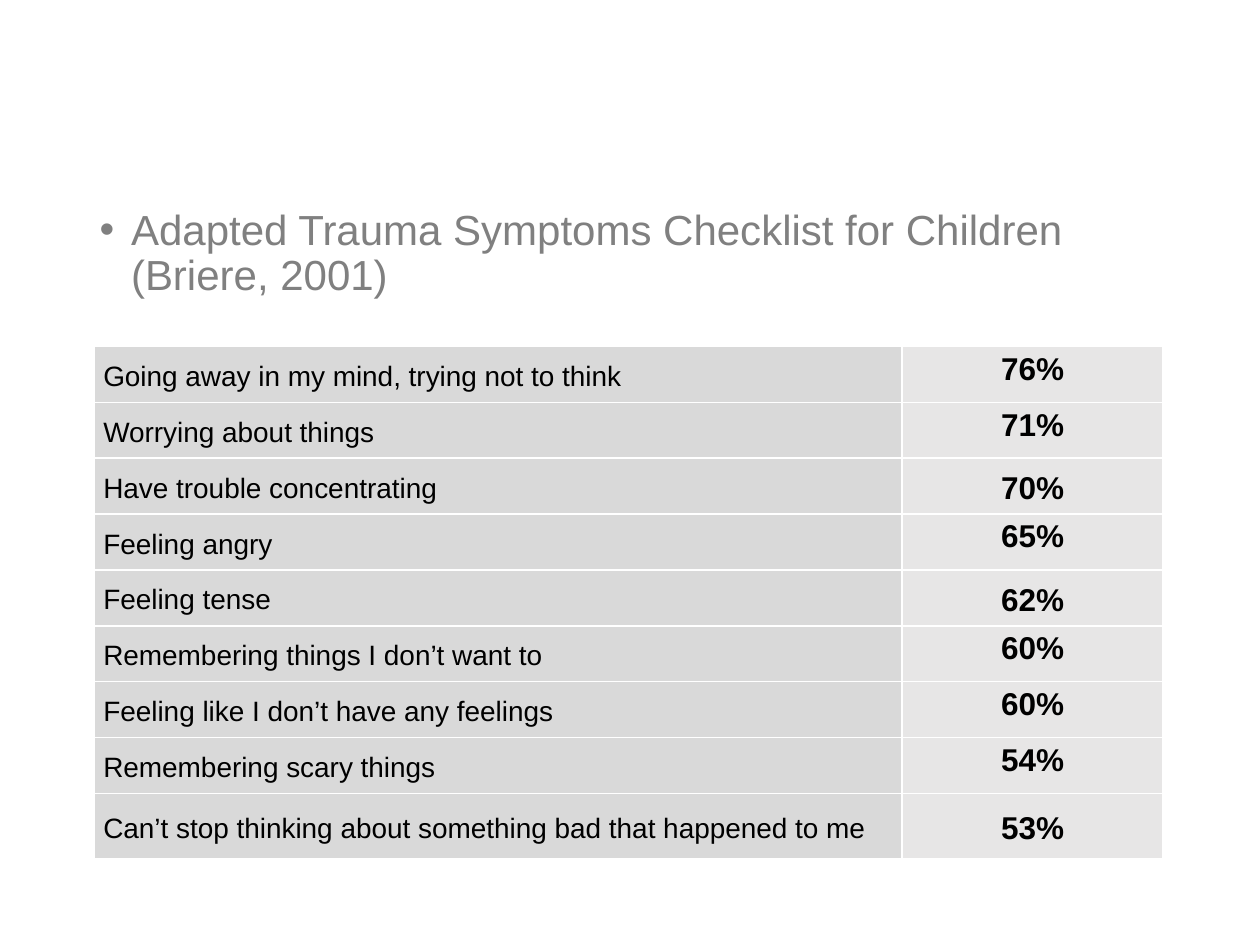
from dataclasses import dataclass

from lxml.etree import SubElement
from pptx import Presentation
from pptx.dml.color import RGBColor
from pptx.enum.text import MSO_ANCHOR, MSO_AUTO_SIZE, PP_ALIGN
from pptx.oxml.ns import qn
from pptx.util import Inches, Pt


@dataclass(frozen=True)
class Theme:
    """Colours, type sizes and font of the slide."""
    font: str = "Arial"
    heading_color: str = "808080"
    text_color: str = "000000"
    symptom_fill: str = "D9D9D9"
    share_fill: str = "E7E6E6"
    rule_color: str = "FFFFFF"
    heading_size: int = 24
    symptom_size: int = 16
    share_size: int = 18


THEME = Theme()
HEADING = "Adapted Trauma Symptoms Checklist for Children (Briere, 2001)"
SYMPTOMS = [
    ("Going away in my mind, trying not to think", "76%", MSO_ANCHOR.TOP),
    ("Worrying about things", "71%", MSO_ANCHOR.TOP),
    ("Have trouble concentrating", "70%", MSO_ANCHOR.MIDDLE),
    ("Feeling angry", "65%", MSO_ANCHOR.TOP),
    ("Feeling tense", "62%", MSO_ANCHOR.MIDDLE),
    ("Remembering things I don’t want to", "60%", MSO_ANCHOR.TOP),
    ("Feeling like I don’t have any feelings", "60%", MSO_ANCHOR.TOP),
    ("Remembering scary things", "54%", MSO_ANCHOR.TOP),
    ("Can’t stop thinking about something bad that happened to me", "53%",
     MSO_ANCHOR.MIDDLE),
]


def style_runs(paragraph, size, color, bold=False):
    """Apply the theme font with a size, colour and weight to each run."""
    for run in paragraph.runs:
        run.font.name = THEME.font
        run.font.size = Pt(size)
        run.font.bold = bold
        run.font.color.rgb = RGBColor.from_string(color)


def rule_cell(cell, sides):
    """Draw one-point rules on the given sides of a cell."""
    properties = cell._tc.get_or_add_tcPr()
    for side in sides:
        line = SubElement(properties, qn(f"a:ln{side}"), w=str(Pt(1)))
        fill = SubElement(line, qn("a:solidFill"))
        SubElement(fill, qn("a:srgbClr"), val=THEME.rule_color)


def fill_cell(cell, text, size, fill, sides, anchor, align, bold=False):
    """Write, align, rule and colour one table cell."""
    cell.text_frame.text = text
    cell.margin_left = cell.margin_right = Inches(0.07)
    cell.margin_top = cell.margin_bottom = 0
    cell.vertical_anchor = anchor
    paragraph = cell.text_frame.paragraphs[0]
    paragraph.alignment = align
    paragraph.line_spacing = 1.15
    paragraph.space_after = Pt(10)
    style_runs(paragraph, size, THEME.text_color, bold)
    rule_cell(cell, sides)
    cell.fill.solid()
    cell.fill.fore_color.rgb = RGBColor.from_string(fill)


def place_heading(body, left, top, width, height):
    """Fill the body placeholder with the bulleted checklist name."""
    body.left, body.top, body.width, body.height = left, top, width, height
    frame = body.text_frame
    frame.text = HEADING
    frame.word_wrap = True
    frame.auto_size = MSO_AUTO_SIZE.NONE
    frame.vertical_anchor = MSO_ANCHOR.TOP
    paragraph = frame.paragraphs[0]
    paragraph.line_spacing = 0.9
    paragraph.space_before = Pt(0)
    properties = paragraph._p.get_or_add_pPr()
    properties.set("marL", str(Inches(0.25)))
    properties.set("indent", str(-Inches(0.25)))
    SubElement(properties, qn("a:buFont"), typeface=THEME.font)
    SubElement(properties, qn("a:buChar"), char="•")
    style_runs(paragraph, THEME.heading_size, THEME.heading_color)


def place_symptom_table(slide, left, top, width, height):
    """Add the table of symptoms and the share reporting each."""
    table = slide.shapes.add_table(
        len(SYMPTOMS), 2, left, top, width, height).table
    table.first_row = table.horz_banding = False
    symptom_column, share_column = table.columns
    symptom_column.width = int(width * 0.756)
    share_column.width = width - symptom_column.width
    *upper_rows, last_row = table.rows
    for row in upper_rows:
        row.height = int(height * 0.109)
    last_row.height = height - sum(row.height for row in upper_rows)
    for index, (symptom, share, share_anchor) in enumerate(SYMPTOMS):
        symptom_sides, share_sides = ("LTB", "RTB") if index == 0 else ("LRTB", "LRTB")
        fill_cell(table.cell(index, 0), symptom, THEME.symptom_size,
                  THEME.symptom_fill, symptom_sides, MSO_ANCHOR.MIDDLE, PP_ALIGN.LEFT)
        fill_cell(table.cell(index, 1), share, THEME.share_size,
                  THEME.share_fill, share_sides, share_anchor, PP_ALIGN.CENTER, True)


def main():
    """Build the slide and save it."""
    deck = Presentation()
    deck.slide_width, deck.slide_height = Inches(10), Inches(7.5)
    slide = deck.slides.add_slide(deck.slide_layouts[1])
    title = slide.shapes.title._element
    title.getparent().remove(title)
    place_heading(slide.placeholders[1],
                  Inches(0.69), Inches(1.61), Inches(8.62), Inches(5.15))
    place_symptom_table(slide, Inches(0.75), Inches(2.75), Inches(8.48), Inches(4.07))
    deck.save("out.pptx")


if __name__ == "__main__":
    main()
